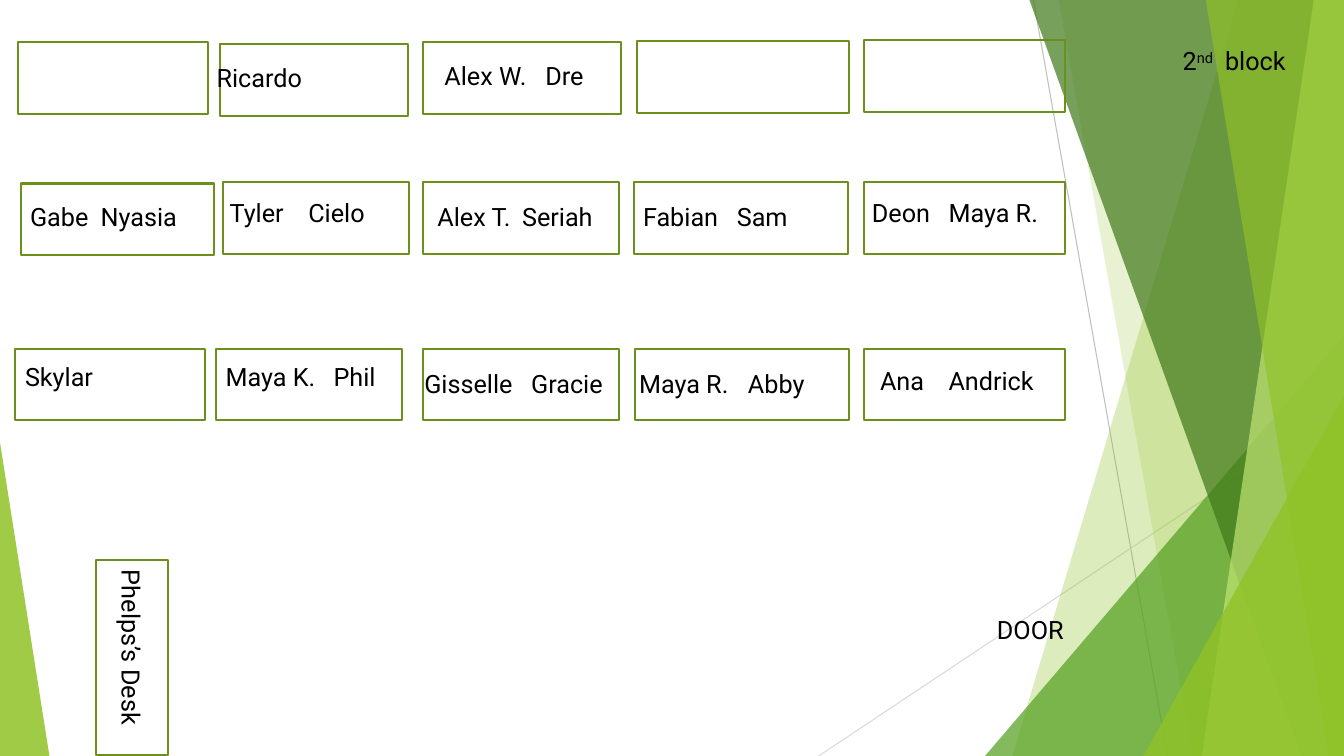
from dataclasses import dataclass

import lxml.etree
import pptx
import pptx.dml.color
import pptx.enum.shapes
import pptx.enum.text
import pptx.oxml.ns
import pptx.util

RGBColor = pptx.dml.color.RGBColor
Shapes = pptx.enum.shapes.MSO_SHAPE

BLACK = RGBColor(0x00, 0x00, 0x00)
OUTLINE = RGBColor(0x6B, 0x90, 0x1C)
LIME = RGBColor(0x90, 0xC2, 0x26)
LEAF = RGBColor(0x54, 0xA0, 0x21)
FOREST = RGBColor(0x3F, 0x78, 0x19)
PALE_LIME = RGBColor(0xC0, 0xE4, 0x74)
GREY = RGBColor(0xBF, 0xBF, 0xBF)
LIGHT_GREY = RGBColor(0xD9, 0xD9, 0xD9)

# The slide is a grid of 13.33 by 7.5 square cells.
GRID_WIDTH, GRID_HEIGHT = 13.33, 7.5
DESK_COLUMNS = ((0.18, 1.88), (2.18, 1.85), (4.2, 1.94), (6.3, 2.12), (8.57, 1.99))
DESK_ROWS = (0.42, 1.81, 3.46)
DESK_HEIGHT = 0.71
LABEL_HEIGHT = 0.4


@dataclass(frozen=True)
class Desk:
    """A desk; nudge moves it off the grid, label is its text's offset, tab places name two."""
    column: int
    row: int
    names: tuple[str, ...] = ()
    label: tuple[float, float] = (0, 0)
    tab: float | None = None
    nudge: tuple[float, float] = (0, 0)
    widen: float = 0


@dataclass(frozen=True)
class Facet:
    """A translucent band: a four-cornered outline, or a right triangle if it has a box."""
    color: RGBColor
    opacity: int
    corners: tuple[tuple[float, float], ...] = ()
    box: tuple[float, float, float, float] | None = None
    apex: float = 1


def band(top: float, bottom: float) -> tuple[tuple[float, float], ...]:
    """Corners of a band from a slanted left edge to the slide's right edge."""
    return ((top, 0), (GRID_WIDTH, 0), (GRID_WIDTH, GRID_HEIGHT), (bottom, GRID_HEIGHT))


FACETS = (
    Facet(LIME, 30, band(12.28, 10.04)),
    Facet(LIME, 20, band(10.5, 11.83)),
    Facet(LEAF, 72, box=(9.77, 3.33, 3.56, 4.17)),
    Facet(FOREST, 70, band(10.21, 12.91)),
    Facet(PALE_LIME, 70, band(13.03, 11.92)),
    Facet(LIME, 65, band(11.96, 13.18)),
    Facet(LIME, 80, box=(11.34, 3.93, 1.99, 3.57)),
    Facet(LIME, 85, box=(0, 4.39, 0.49, 3.11), apex=0),
)
RAYS = (
    ((10.25, 0), (11.58, GRID_HEIGHT), GREY),
    ((GRID_WIDTH, 4.03), (8.12, GRID_HEIGHT), LIGHT_GREY),
)
DESKS = (
    Desk(0, 0),
    Desk(1, 0, ("Ricardo",), (-0.13, 0.15), nudge=(0, 0.02), widen=0.02),
    Desk(2, 0, ("Alex W.", "Dre"), (0.11, 0.13), 1.0, widen=0.02),
    Desk(3, 0, nudge=(0.02, -0.01), widen=-0.02),
    Desk(4, 0, nudge=(0, -0.02)),
    Desk(0, 1, ("Gabe", "Nyasia"), (0.02, 0.14), 0.7, (0.03, 0.01), 0.03),
    Desk(1, 1, ("Tyler", "Cielo"), (0, 0.1), 0.78, (0.03, 0)),
    Desk(2, 1, ("Alex T.", "Seriah"), (0.04, 0.14), 0.84),
    Desk(3, 1, ("Fabian", "Sam"), (-0.02, 0.14), 0.93, (-0.01, 0)),
    Desk(4, 1, ("Deon", "Maya R."), (-0.02, 0.1), 0.76),
    Desk(0, 2, ("Skylar",), (-0.03, 0.08), nudge=(-0.03, 0)),
    Desk(1, 2, ("Maya K.", "Phil"), (-0.04, 0.08), 1.07, (-0.04, 0)),
    Desk(2, 2, ("Gisselle", "Gracie"), (-0.09, 0.15), 1.06),
    Desk(3, 2, ("Maya R.", "Abby"), (-0.06, 0.15), 1.08),
    Desk(4, 2, ("Ana", "Andrick"), (0.06, 0.12), 0.68),
)

deck = pptx.Presentation()
deck.slide_width = pptx.util.Inches(GRID_WIDTH)
deck.slide_height = pptx.util.Inches(GRID_HEIGHT)
CELL = deck.slide_width / GRID_WIDTH


def cells(*counts: float) -> list[pptx.util.Emu]:
    return [pptx.util.Emu(round(count * CELL)) for count in counts]


def write(frame, *pieces: str, raised: tuple[str, ...] = (), tab: float | None = None,
          size: float = 18, color: RGBColor = BLACK, font: str = "Roboto") -> None:
    """Write one left-aligned line; pieces named in raised become superscript."""
    frame.word_wrap = True
    frame.vertical_anchor = pptx.enum.text.MSO_ANCHOR.TOP
    para = frame.paragraphs[0]
    para.alignment = pptx.enum.text.PP_ALIGN.LEFT
    if tab is not None:
        properties = para._p.get_or_add_pPr()
        stops = lxml.etree.SubElement(properties, pptx.oxml.ns.qn("a:tabLst"))
        lxml.etree.SubElement(stops, pptx.oxml.ns.qn("a:tab"),
                              pos=str(cells(tab)[0]), algn="l")
    for piece in pieces:
        span = para.add_run()
        span.text = piece
        span.font.size = pptx.util.Pt(size)
        span.font.name = font
        span.font.color.rgb = color
        if piece in raised:
            span._r.get_or_add_rPr().set("baseline", "30000")


def add_label(page, text: str, left: float, top: float, width: float = 2.2,
              rotation: float = 0, tab: float | None = None) -> None:
    box = page.shapes.add_textbox(*cells(left, top, width, LABEL_HEIGHT))
    box.rotation = rotation
    write(box.text_frame, text, tab=tab)


def add_outline(page, left: float, top: float, width: float, rotation: float = 0) -> None:
    box = page.shapes.add_shape(Shapes.RECTANGLE, *cells(left, top, width, DESK_HEIGHT))
    box.rotation = rotation
    box.shadow.inherit = False
    box.fill.background()
    box.line.color.rgb = OUTLINE
    box.line.width = pptx.util.Pt(1.5)


def add_facet(page, facet: Facet) -> None:
    if facet.box:
        shape = page.shapes.add_shape(Shapes.ISOSCELES_TRIANGLE, *cells(*facet.box))
        shape.adjustments[0] = facet.apex
    else:
        points = [cells(*corner) for corner in facet.corners]
        builder = page.shapes.build_freeform(*points[0])
        builder.add_line_segments(points[1:], close=True)
        shape = builder.convert_to_shape()
    shape.shadow.inherit = False
    shape.line.fill.background()
    shape.fill.solid()
    shape.fill.fore_color.rgb = facet.color
    tint = shape.element.spPr.find(".//" + pptx.oxml.ns.qn("a:srgbClr"))
    lxml.etree.SubElement(tint, pptx.oxml.ns.qn("a:alpha"), val=str(facet.opacity * 1000))


def add_ray(page, start: tuple[float, float], end: tuple[float, float],
            color: RGBColor) -> None:
    ray = page.shapes.add_connector(pptx.enum.shapes.MSO_CONNECTOR.STRAIGHT,
                                    *cells(*start, *end))
    ray.line.color.rgb = color
    ray.line.width = pptx.util.Pt(0.75)
    lxml.etree.SubElement(ray.element.spPr, pptx.oxml.ns.qn("a:effectLst"))


def add_desk(page, desk: Desk) -> None:
    left, width = DESK_COLUMNS[desk.column]
    top = DESK_ROWS[desk.row]
    add_outline(page, left + desk.nudge[0], top + desk.nudge[1], width + desk.widen)
    if desk.names:
        add_label(page, "\t".join(desk.names), left + desk.label[0],
                  top + desk.label[1], tab=desk.tab)


def add_title(page) -> None:
    title = page.shapes.title
    title.left, title.top, title.width, title.height = cells(11.63, 0.4, 1.41, LABEL_HEIGHT)
    write(title.text_frame, "2", "nd", "\tblock", raised=("nd",), tab=0.42)
    title.element.getparent().append(title.element)  # in front of the facets


def main() -> None:
    page = deck.slides.add_slide(deck.slide_layouts.get_by_name("Title Only"))
    for ray in RAYS:
        add_ray(page, *ray)
    for facet in FACETS:
        add_facet(page, facet)
    for desk in DESKS:
        add_desk(page, desk)
    add_outline(page, 0.34, 6.17, 1.94, rotation=90)
    add_label(page, "Phelps’s Desk", 0.3, 6.36, 2.01, rotation=90)
    add_label(page, "DOOR", 9.79, 6.05)
    add_title(page)
    deck.save("out.pptx")


if __name__ == "__main__":
    main()
